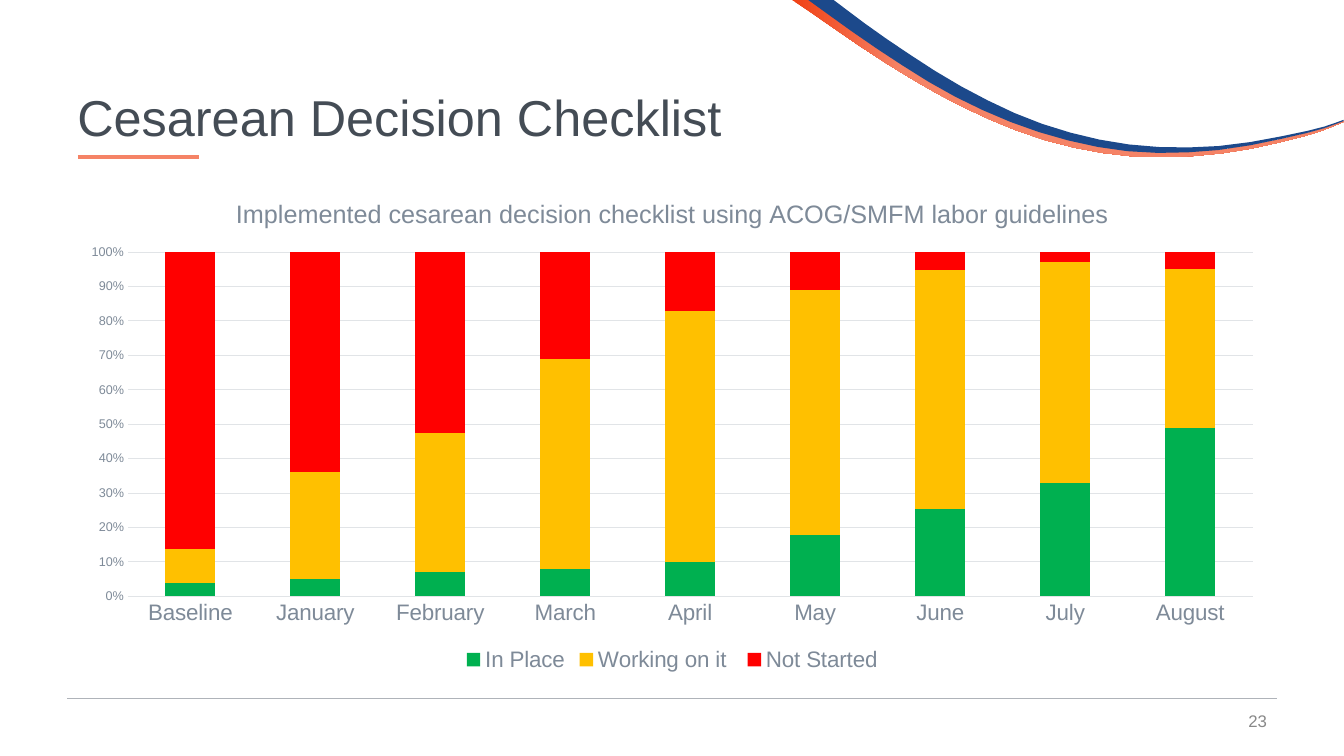
from dataclasses import dataclass
from itertools import pairwise
from typing import Any

from lxml import etree
from pptx import Presentation
from pptx import util as u
from pptx.chart import data as chart_data
from pptx.dml import color as dml
from pptx.enum import chart as charts, shapes, text
from pptx.oxml import ns

Point = tuple[float, float]


@dataclass(frozen=True)
class Theme:
    font: str = "Arial"
    heading: str = "444C55"
    muted: str = "7E8A98"
    number: str = "898989"
    grid: str = "E1E4E7"
    footer_rule: str = "AFB3B9"
    accent: str = "F58366"
    accent_deep: str = "F04115"
    navy: str = "1C498B"
    in_place: str = "00B050"
    working: str = "FFC000"
    not_started: str = "FF0000"
    title_size: int = 36
    chart_title_size: int = 18
    label_size: int = 16
    number_size: int = 12
    chart_size: int = 10
    scale_size: int = 9


THEME = Theme()


@dataclass(frozen=True)
class Swoosh:
    upper: list[Point]
    lower: list[Point]
    colors: tuple[str, ...]


@dataclass(frozen=True)
class Rule:
    left: float
    right: float
    top: float
    color: str
    weight: float


@dataclass(frozen=True)
class Label:
    box: tuple[float, float, float, float]
    wording: str
    size: int
    color: str
    formats: dict[str, Any]


@dataclass(frozen=True)
class Status:
    name: str
    values: list[int]
    color: str


SWOOSHES = [
    Swoosh(
        [(20.45, 0), (22.4, 1.37), (24.33, 2.51), (26.39, 3.38), (28.58, 3.81),
         (30.78, 3.78), (32.99, 3.35), (33.86, 3.05)],
        [(33.86, 3.07), (32.87, 3.43), (30.81, 3.86), (28.55, 3.94), (26.34, 3.53),
         (24.26, 2.69), (22.3, 1.57), (20.42, 0.3), (19.96, 0)],
        (THEME.accent_deep, THEME.accent),
    ),
    Swoosh(
        [(21.01, 0), (22.33, 0.97), (24.23, 2.18), (26.26, 3.12), (28.45, 3.64),
         (30.71, 3.68), (32.94, 3.3), (33.86, 3.02)],
        [(33.86, 3.05), (32.94, 3.35), (30.71, 3.78), (28.42, 3.81), (26.19, 3.33),
         (24.08, 2.44), (22.12, 1.24), (20.37, 0)],
        (THEME.navy,),
    ),
]
RULES = [
    Rule(1.7, 32.18, 17.6, THEME.footer_rule, 0.5),
    Rule(1.96, 5.01, 3.96, THEME.accent, 2.5),
]
LABELS = [
    Label((24.56, 17.65, 7.62, 1.02), "23", THEME.number_size, THEME.number,
          {"alignment": text.PP_ALIGN.RIGHT}),
    Label((1.7, 1.19, 30.48, 3.68), "Cesarean Decision Checklist", THEME.title_size,
          THEME.heading, {"alignment": text.PP_ALIGN.LEFT, "line_spacing": 0.9}),
]
MONTHS = ["Baseline", "January", "February", "March", "April", "May", "June", "July", "August"]
STATUSES = [
    Status("In Place", [4, 5, 7, 8, 10, 18, 25, 33, 49], THEME.in_place),
    Status("Working on it ", [10, 31, 41, 61, 73, 72, 69, 64, 46], THEME.working),
    Status("Not Started", [87, 64, 53, 31, 17, 11, 5, 3, 5], THEME.not_started),
]
CHART_TITLE = "Implemented cesarean decision checklist using ACOG/SMFM labor guidelines"
PLOT_AREA = {"x": 0.05, "y": 0.15, "w": 0.93, "h": 0.69}


def rgb(value: str) -> dml.RGBColor:
    return dml.RGBColor.from_string(value)


def apply(target: Any, formats: dict[str, Any]) -> None:
    for name, value in formats.items():
        setattr(target, name, value)


def style_font(font: Any, size: int, color: str) -> None:
    apply(font, {"name": THEME.font, "size": u.Pt(size), "bold": False})
    font.color.rgb = rgb(color)


def style_line(line: Any, color: str, weight: float) -> None:
    line.color.rgb = rgb(color)
    line.width = u.Pt(weight)


def smooth_edge(points: list[Point], steps: int = 3) -> list[Point]:
    padded = [points[0], *points, points[-1]]
    edge = [points[0]]
    for index, (start, end) in enumerate(pairwise(points)):
        before, after = padded[index], padded[index + 3]
        for step in range(1, steps + 1):
            t = step / steps
            edge.append(tuple(
                b + t * ((c - a) + t * ((2 * a - 5 * b + 4 * c - d)
                                        + t * (3 * b - a - 3 * c + d))) / 2
                for a, b, c, d in zip(before, start, end, after)
            ))
    return edge


def draw_swoosh(slide: Any, swoosh: Swoosh) -> None:
    outline = [(u.Cm(x), u.Cm(y))
               for x, y in smooth_edge(swoosh.upper) + smooth_edge(swoosh.lower)]
    builder = slide.shapes.build_freeform(*outline[0])
    builder.add_line_segments(outline[1:])
    shape = builder.convert_to_shape()
    shape.shadow.inherit = False
    shape.line.fill.background()
    if len(swoosh.colors) == 1:
        shape.fill.solid()
        shape.fill.fore_color.rgb = rgb(swoosh.colors[0])
        return
    shape.fill.gradient()
    shape.fill.gradient_angle = 0
    for stop, color, position in zip(shape.fill.gradient_stops, swoosh.colors, (0, 0.2)):
        stop.color.rgb = rgb(color)
        stop.position = position


def draw_rule(slide: Any, rule: Rule) -> None:
    connector = slide.shapes.add_connector(
        shapes.MSO_CONNECTOR.STRAIGHT,
        u.Cm(rule.left), u.Cm(rule.top), u.Cm(rule.right), u.Cm(rule.top))
    style_line(connector.line, rule.color, rule.weight)
    etree.SubElement(connector._element.spPr, ns.qn("a:effectLst"))


def draw_label(slide: Any, label: Label) -> None:
    frame = slide.shapes.add_textbox(*map(u.Cm, label.box)).text_frame
    apply(frame, {"word_wrap": True, "vertical_anchor": text.MSO_ANCHOR.MIDDLE})
    paragraph = frame.paragraphs[0]
    paragraph.text = label.wording
    apply(paragraph, label.formats)
    style_font(paragraph.runs[0].font, label.size, label.color)


def place_plot(chart: Any) -> None:
    plot_area = chart._chartSpace.chart.plotArea
    for old_layout in plot_area.findall(ns.qn("c:layout")):
        plot_area.remove(old_layout)
    layout = etree.Element(ns.qn("c:layout"))
    manual = etree.SubElement(layout, ns.qn("c:manualLayout"))
    settings = {"layoutTarget": "inner", "xMode": "edge", "yMode": "edge", **PLOT_AREA}
    for name, value in settings.items():
        etree.SubElement(manual, ns.qn(f"c:{name}")).set("val", str(value))
    plot_area.insert(0, layout)


def draw_chart(slide: Any) -> None:
    data = chart_data.CategoryChartData()
    data.categories = MONTHS
    for status in STATUSES:
        data.add_series(status.name, status.values)
    chart = slide.shapes.add_chart(
        charts.XL_CHART_TYPE.COLUMN_STACKED_100,
        u.Cm(1.7), u.Cm(4.47), u.Cm(30.48), u.Cm(12.57), data).chart
    style_font(chart.font, THEME.chart_size, THEME.heading)
    apply(chart, {"has_title": True, "has_legend": True})
    chart.chart_title.include_in_layout = False
    paragraph = chart.chart_title.text_frame.paragraphs[0]
    paragraph.text = CHART_TITLE
    style_font(paragraph.runs[0].font, THEME.chart_title_size, THEME.muted)
    apply(chart.legend, {"position": charts.XL_LEGEND_POSITION.BOTTOM, "include_in_layout": False})
    style_font(chart.legend.font, THEME.label_size, THEME.muted)
    plot = chart.plots[0]
    apply(plot, {"gap_width": 150, "overlap": 100, "vary_by_categories": False})
    for series, status in zip(plot.series, STATUSES):
        series.format.fill.solid()
        series.format.fill.fore_color.rgb = rgb(status.color)
    months, scale = chart.category_axis, chart.value_axis
    for axis, size in ((months, THEME.label_size), (scale, THEME.scale_size)):
        apply(axis, {"major_tick_mark": charts.XL_TICK_MARK.NONE,
                     "minor_tick_mark": charts.XL_TICK_MARK.NONE})
        style_font(axis.tick_labels.font, size, THEME.muted)
    style_line(months.format.line, THEME.grid, 0.75)
    scale.format.line.fill.background()
    style_line(scale.major_gridlines.format.line, THEME.grid, 0.75)
    apply(scale.tick_labels, {"number_format": "0%", "number_format_is_linked": False})
    place_plot(chart)


def main() -> None:
    presentation = Presentation()
    apply(presentation, {"slide_width": u.Cm(33.87), "slide_height": u.Cm(19.05)})
    slide = presentation.slides.add_slide(presentation.slide_layouts[6])
    for swoosh in SWOOSHES:
        draw_swoosh(slide, swoosh)
    for rule in RULES:
        draw_rule(slide, rule)
    for label in LABELS:
        draw_label(slide, label)
    draw_chart(slide)
    presentation.save("out.pptx")


if __name__ == "__main__":
    main()
